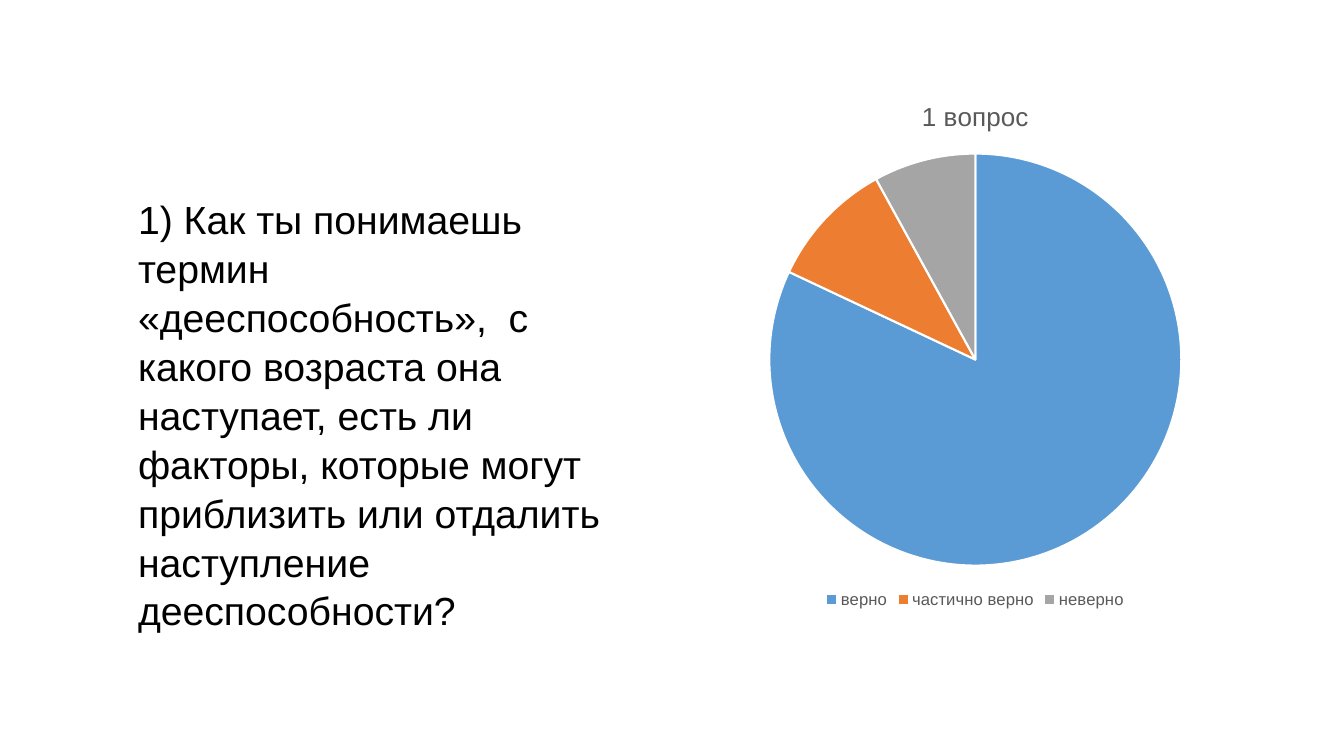
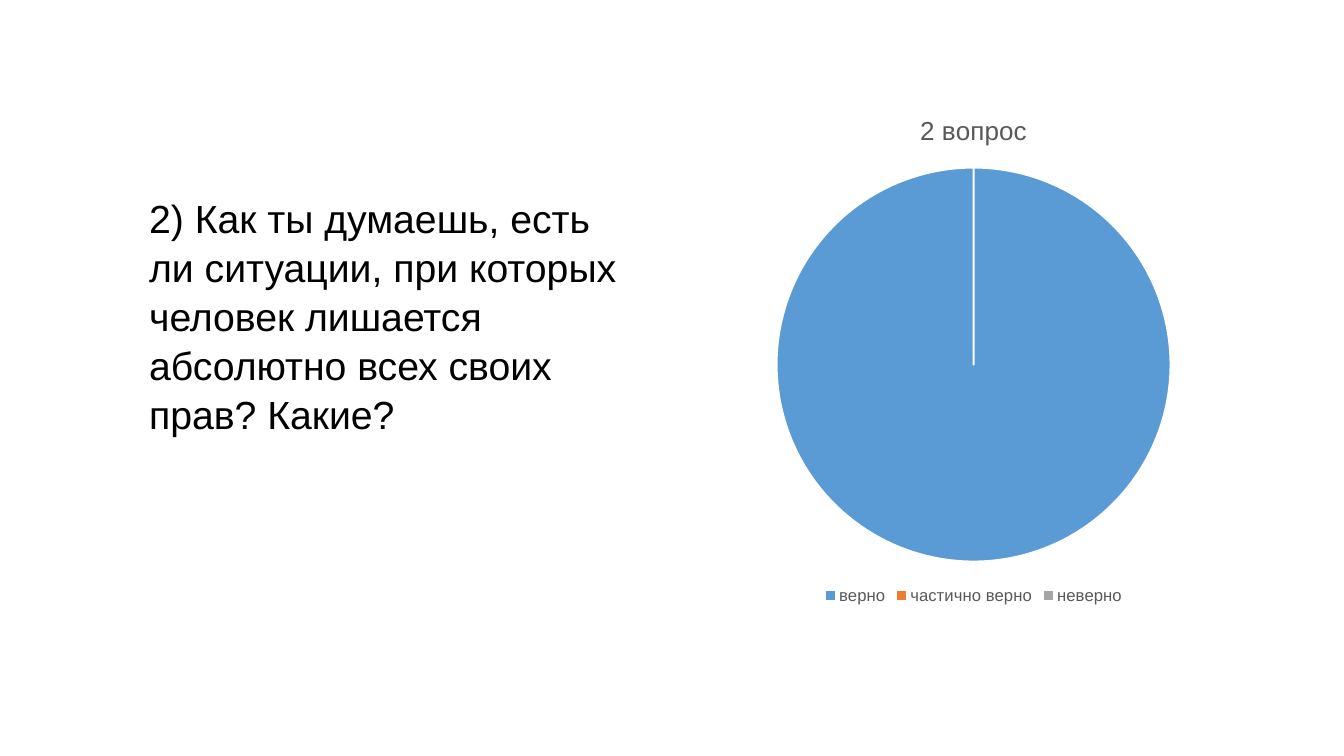
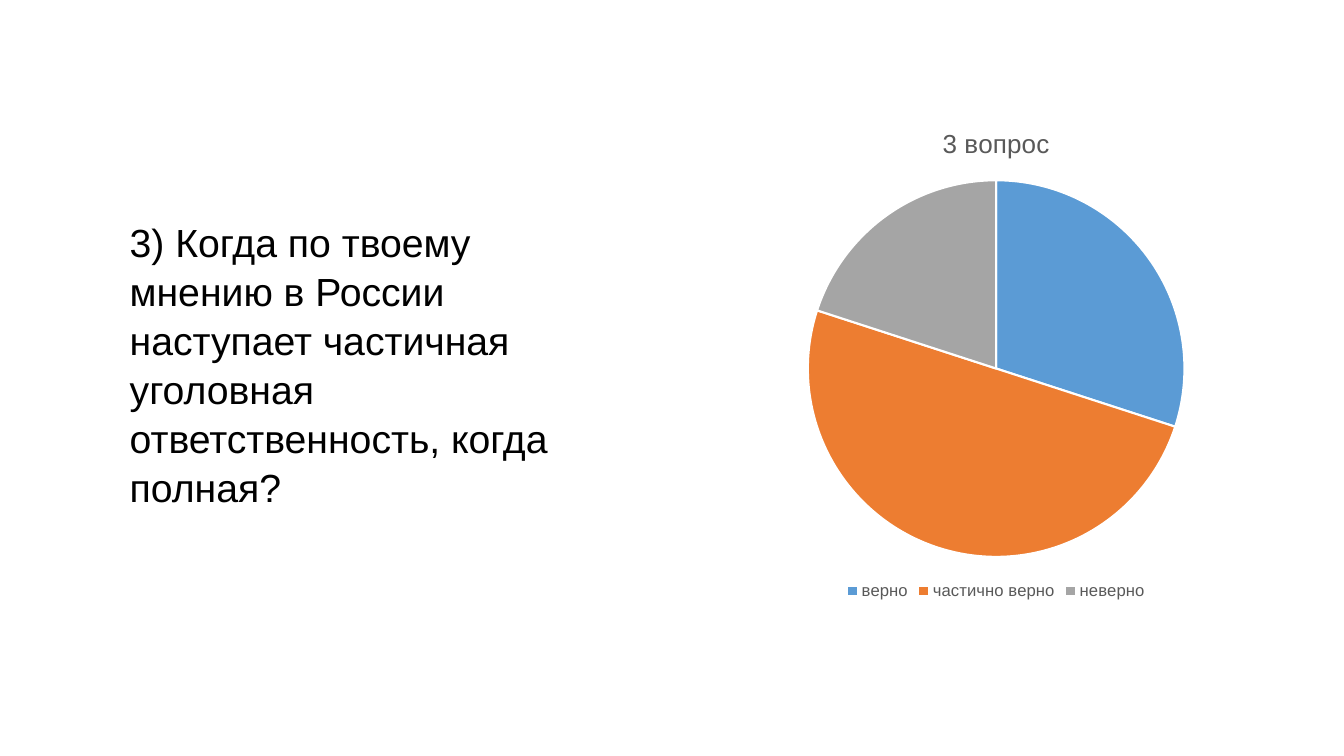
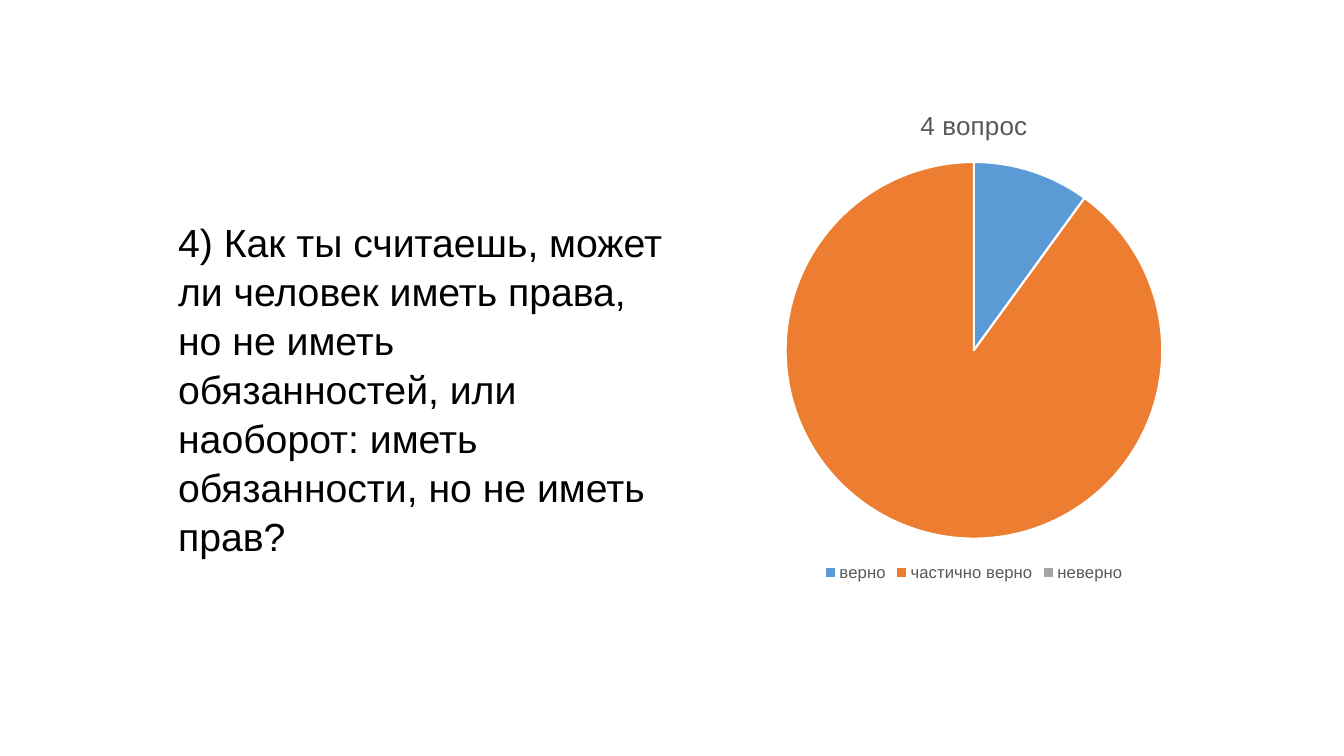
from dataclasses import dataclass

from pptx import Presentation
from pptx.chart.data import CategoryChartData
from pptx.dml.color import RGBColor
from pptx.enum.chart import XL_CHART_TYPE, XL_LEGEND_POSITION
from pptx.enum.text import MSO_AUTO_SIZE
from pptx.util import Cm, Pt

PIE = XL_CHART_TYPE.PIE
BOTTOM = XL_LEGEND_POSITION.BOTTOM
GROW = MSO_AUTO_SIZE.SHAPE_TO_FIT_TEXT
BLANK_LAYOUT = 6


@dataclass(frozen=True)
class Theme:
    font: str = "Arial"
    ink: str = "000000"
    muted: str = "595959"
    slice_edge: str = "FFFFFF"
    slices: tuple = ("5B9BD5", "ED7D31", "A5A5A5")
    edge_width: float = 1.5
    question_size: float = 28
    chart_title_size: float = 18.6
    legend_size: float = 11.9
    chart_size: float = 10
    line_spacing: float = 1.04


THEME = Theme()
ANSWERS = ("верно", "частично верно", "неверно")
QUESTION_WIDTH = 12.7

# Boxes are left, top, width, height in centimetres.
QUESTIONS = (
    dict(
        text="1) Как ты понимаешь термин «дееспособность»,  с какого возраста "
             "она наступает, есть ли факторы, которые могут приблизить или "
             "отдалить наступление дееспособности?",
        text_box=(3.23, 4.75, QUESTION_WIDTH, 9.58),
        chart_box=(17.53, 1.98, 14.1, 13.46),
        values=(82, 10, 8),
    ),
    dict(
        text="2) Как ты думаешь, есть ли ситуации, при которых человек "
             "лишается абсолютно всех своих прав? Какие?",
        text_box=(3.51, 4.72, QUESTION_WIDTH, 6.07),
        chart_box=(16.94, 2.34, 15.19, 13),
        values=(100, 0, 0),
    ),
    dict(
        text="3) Когда по твоему мнению в России наступает частичная "
             "уголовная ответственность, когда полная?",
        text_box=(3.02, 5.33, QUESTION_WIDTH, 7.24),
        chart_box=(16.94, 2.67, 16.33, 12.55),
        values=(30, 50, 20),
    ),
    dict(
        text="4) Как ты считаешь, может ли человек иметь права, но не иметь "
             "обязанностей, или наоборот: иметь обязанности, но не иметь прав?",
        text_box=(4.24, 5.33, QUESTION_WIDTH, 8.41),
        chart_box=(16.94, 2.21, 15.21, 12.55),
        values=(10, 90, 0),
    ),
)


def rgb(color):
    return RGBColor.from_string(color)


def style_font(font, size, color):
    font.name = THEME.font
    font.size = Pt(size)
    font.bold = False
    font.color.rgb = rgb(color)


def write(tf, text, *, size, color, spacing=None):
    p = tf.paragraphs[0]
    p.line_spacing = spacing
    r = p.add_run()
    r.text = text
    style_font(r.font, size, color)


def add_question(s, text, box):
    tf = s.shapes.add_textbox(*map(Cm, box)).text_frame
    tf.word_wrap = True
    tf.auto_size = GROW
    write(tf, text, size=THEME.question_size, color=THEME.ink,
          spacing=THEME.line_spacing)


def add_answer_pie(s, title, values, box):
    data = CategoryChartData()
    data.categories = ANSWERS
    data.add_series(title, values)
    chart = s.shapes.add_chart(PIE, *map(Cm, box), data).chart
    style_font(chart.font, THEME.chart_size, THEME.ink)

    chart.has_title = True
    chart.chart_title.include_in_layout = False
    write(chart.chart_title.text_frame, title,
          size=THEME.chart_title_size, color=THEME.muted)

    chart.has_legend = True
    chart.legend.position = BOTTOM
    chart.legend.include_in_layout = False
    style_font(chart.legend.font, THEME.legend_size, THEME.muted)

    plot = chart.plots[0]
    plot.vary_by_categories = True
    for i, color in enumerate(THEME.slices):
        fmt = plot.series[0].points[i].format
        fmt.fill.solid()
        fmt.fill.fore_color.rgb = rgb(color)
        fmt.line.color.rgb = rgb(THEME.slice_edge)
        fmt.line.width = Pt(THEME.edge_width)


def add_question_slide(prs, number, question):
    s = prs.slides.add_slide(prs.slide_layouts[BLANK_LAYOUT])
    add_answer_pie(s, f"{number} вопрос", question["values"],
                   question["chart_box"])
    add_question(s, question["text"], question["text_box"])


def main():
    prs = Presentation()
    prs.slide_width, prs.slide_height = Cm(33.87), Cm(19.05)
    for number, question in enumerate(QUESTIONS, start=1):
        add_question_slide(prs, number, question)
    prs.save("out.pptx")


if __name__ == "__main__":
    main()
